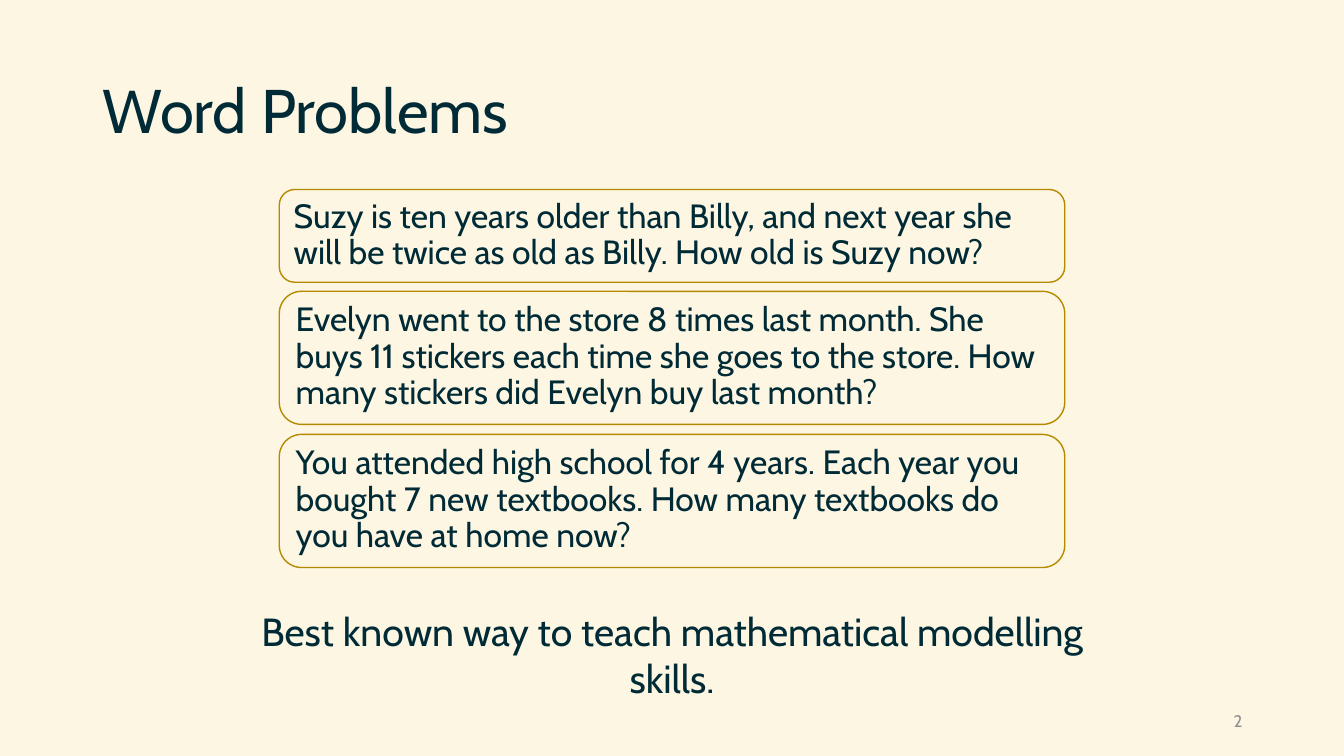
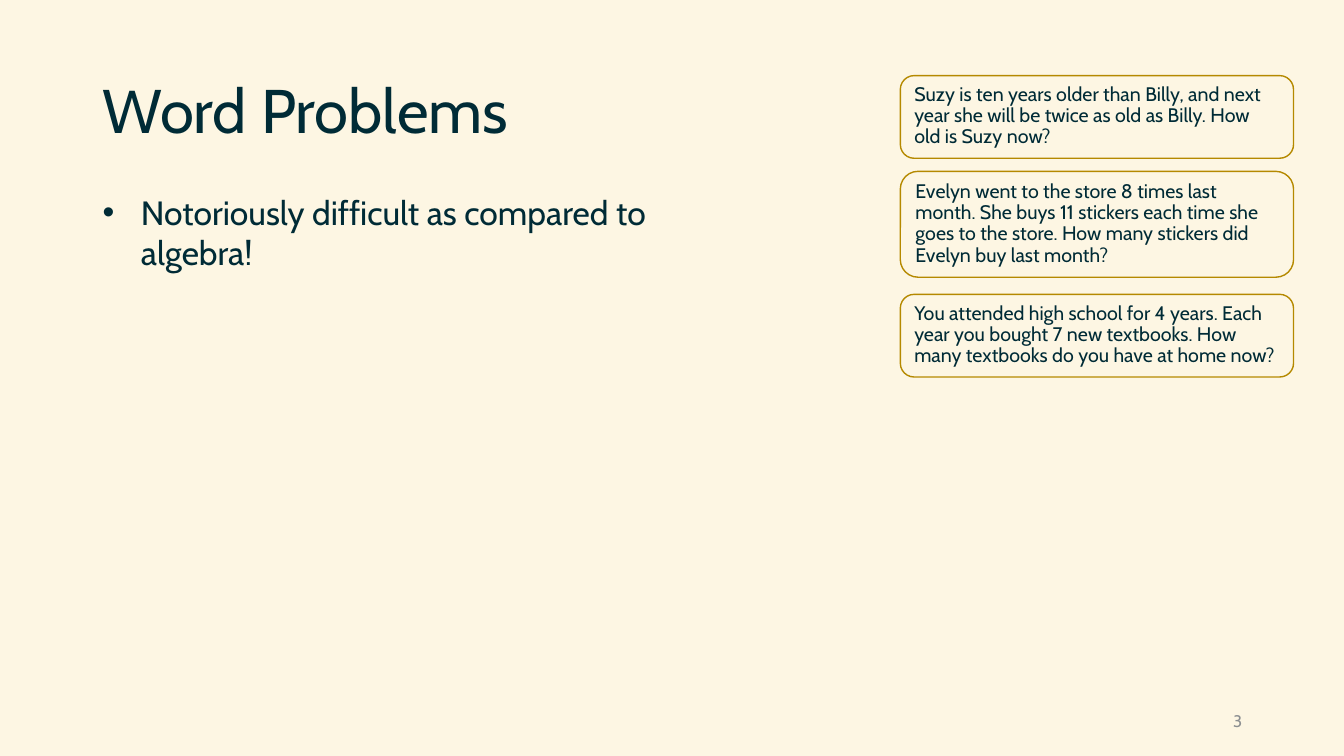
from lxml.etree import SubElement
from pptx import Presentation
from pptx.dml.color import RGBColor
from pptx.enum.shapes import MSO_SHAPE
from pptx.enum.text import MSO_ANCHOR, MSO_AUTO_SIZE, PP_ALIGN
from pptx.oxml.ns import qn
from pptx.util import Inches, Pt

FONT = "Cabin"
CREAM = "FDF6E3"
DARK_TEAL = "002B36"
GOLD = "B58900"
GREY = "8C8F91"

TITLE = "Word Problems"
PROBLEMS = (
    "Suzy is ten years older than Billy, and next year she will be twice as old as Billy. "
    "How old is Suzy now?",
    "Evelyn went to the store 8 times last month. She buys 11 stickers each time she goes "
    "to the store. How many stickers did Evelyn buy last month?",
    "You attended high school for 4 years. Each year you bought 7 new textbooks. "
    "How many textbooks do you have at home now?",
)
FIT = {"auto_size": MSO_AUTO_SIZE.SHAPE_TO_FIT_TEXT}
MIDDLE = {"vertical_anchor": MSO_ANCHOR.MIDDLE}
PROBLEM_PARAGRAPH = {
    "alignment": PP_ALIGN.LEFT, "line_spacing": 0.9, "space_before": Pt(10),
}


def color(hex_value):
    return RGBColor.from_string(hex_value)


def set_fill(target, hex_value):
    target.fill.solid()
    target.fill.fore_color.rgb = color(hex_value)


def apply_format(target, values):
    for name, value in values.items():
        setattr(target, name, value)


def write_text(shape, text, size, hex_value=DARK_TEAL, frame_format=None, paragraph_format=None):
    frame = shape.text_frame
    apply_format(frame, {"word_wrap": True, "vertical_anchor": MSO_ANCHOR.TOP})
    apply_format(frame, frame_format or {})
    paragraph = frame.paragraphs[0]
    apply_format(paragraph, paragraph_format or {})
    run = paragraph.add_run()
    run.text = text
    apply_format(run.font, {"name": FONT, "size": Pt(size)})
    run.font.color.rgb = color(hex_value)
    return paragraph


def add_text(slide, box, *text_arguments):
    shape = slide.shapes.add_textbox(*map(Inches, box))
    return write_text(shape, *text_arguments)


def add_bullet(paragraph, indent):
    properties = paragraph._p.get_or_add_pPr()
    properties.set("marL", str(Inches(indent)))
    properties.set("indent", str(-Inches(indent)))
    SubElement(properties, qn("a:buFont"), typeface="Arial")
    SubElement(properties, qn("a:buChar"), char="•")


def add_problems(slide, left, width, rows, size):
    """Draw one rounded card per problem; rows holds (top, height) pairs."""
    for text, (top, height) in zip(PROBLEMS, rows):
        card = slide.shapes.add_shape(
            MSO_SHAPE.ROUNDED_RECTANGLE, *map(Inches, (left, top, width, height)))
        card.shadow.inherit = False
        set_fill(card, CREAM)
        set_fill(card.line, GOLD)
        card.line.width = Pt(1)
        write_text(card, text, size, DARK_TEAL, FIT, PROBLEM_PARAGRAPH)


def add_slide(presentation, number):
    slide = presentation.slides.add_slide(presentation.slide_layouts[6])
    add_text(slide, (0.92, 0.4, 11.5, 1.45), TITLE, 44, DARK_TEAL, MIDDLE, {"line_spacing": 0.9})
    add_text(slide, (9.42, 6.95, 3, 0.4), str(number), 12, GREY, MIDDLE,
             {"alignment": PP_ALIGN.RIGHT})
    return slide


def main():
    presentation = Presentation()
    apply_format(presentation, {"slide_width": Inches(13.33), "slide_height": Inches(7.5)})
    set_fill(presentation.slide_master.background, CREAM)

    examples = add_slide(presentation, 2)
    add_problems(examples, 2.77, 7.79, ((1.88, 0.92), (2.89, 1.32), (4.31, 1.32)), 24)
    add_text(examples, (2.16, 5.98, 9.01, 0.57),
             "Best known way to teach mathematical modelling skills.", 28, DARK_TEAL, FIT,
             {"alignment": PP_ALIGN.CENTER})

    difficulty = add_slide(presentation, 3)
    add_problems(difficulty, 8.93, 3.9, ((0.75, 0.82), (1.7, 1.05), (2.92, 0.82)), 14)
    point = add_text(difficulty, (0.92, 1.85, 6.68, 0.5),
                     "Notoriously difficult as compared to algebra!", 24, DARK_TEAL, FIT)
    add_bullet(point, 0.38)

    presentation.save("out.pptx")


if __name__ == "__main__":
    main()
